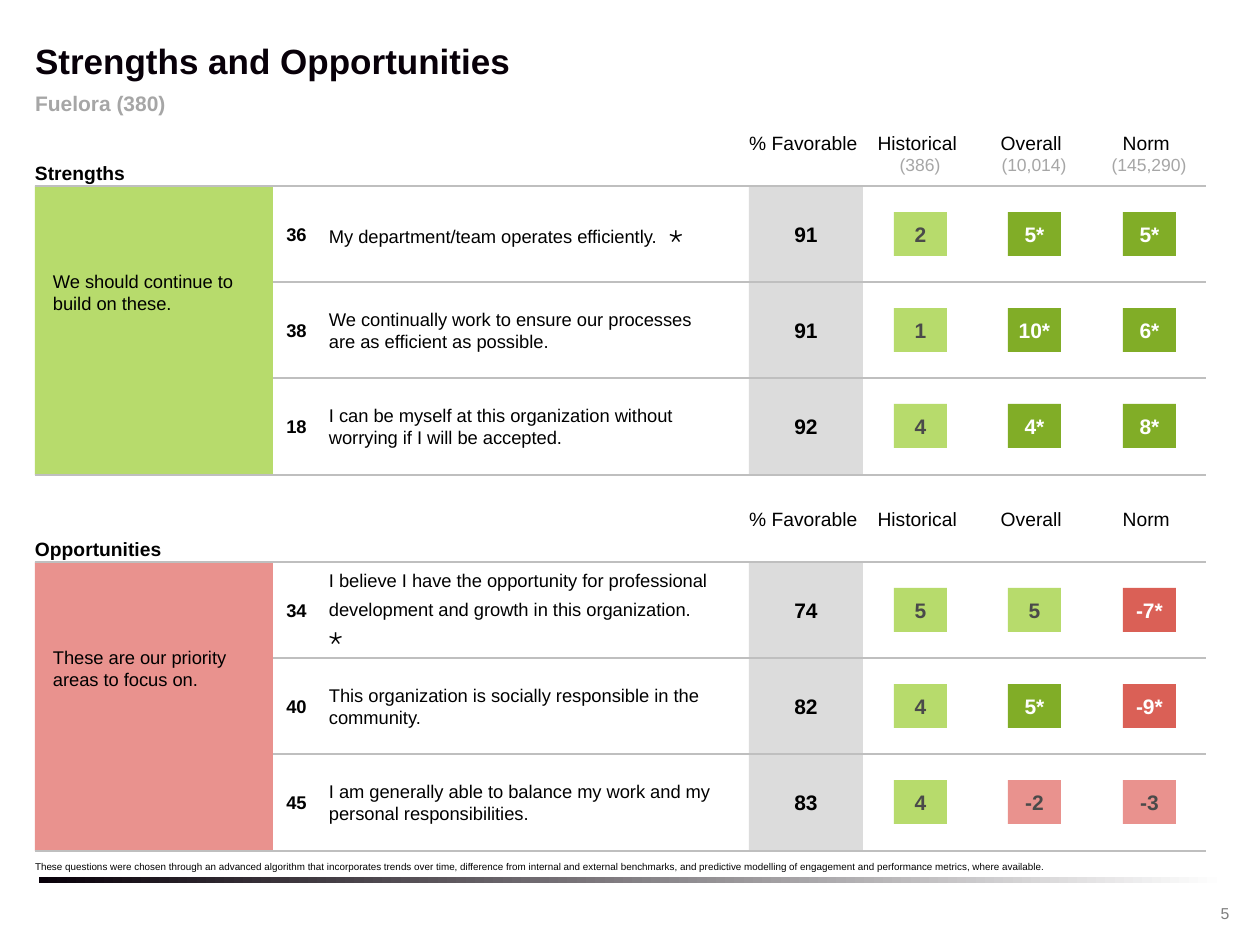
"""Build the strengths and opportunities survey slide."""
from pptx import Presentation, util as u
from pptx.dml.color import RGBColor
from pptx.enum import shapes, text
from pptx.oxml.ns import qn
from lxml import etree

STAR = (" ⋆", 14)
HEADS = ["% Favorable ", "Historical ", "Overall ", "Norm "]
PARTS = [
    dict(name="Strengths", top=186, fill="B7DB6C",
         note="We should continue to build on these.",
         sizes=["", "(386)", "(10,014)", "(145,290)"],
         rows=[
             ("36", ["My department/team operates efficiently. ", STAR],
              "91", ["2", "5*", "5*"]),
             ("38", ["We continually work to ensure our processes are as efficient as possible."],
              "91", ["1", "10*", "6*"]),
             ("18", ["I can be myself at this organization without worrying if I will be accepted."],
              "92", ["4", "4*", "8*"]),
         ]),
    dict(name="Opportunities", top=562, fill="E9928E",
         note="These are our priority areas to focus on.",
         sizes=["", "", "", ""],
         rows=[
             ("34", ["I believe I have the opportunity for professional development "
                     "and growth in this organization. ", STAR],
              "74", ["5", "5", "-7*"]),
             ("40", ["This organization is socially responsible in the community."],
              "82", ["4", "5*", "-9*"]),
             ("45", ["I am generally able to balance my work and my personal responsibilities."],
              "83", ["4", "-2", "-3"]),
         ]),
]
FOOT = ("These questions were chosen through an advanced algorithm that incorporates "
        "trends over time, difference from internal and external benchmarks, and "
        "predictive modelling of engagement and performance metrics, where available.")
COLS = [35, 273, 749, 863, 977, 1092, 1206]
TALL = 289
TONES = {(False, False): "B7DB6C", (False, True): "81AD27",
         (True, False): "E9928E", (True, True): "DA6056"}
MID, LOW, TOP = text.MSO_ANCHOR.MIDDLE, text.MSO_ANCHOR.BOTTOM, text.MSO_ANCHOR.TOP
LEFT, MEAN = text.PP_ALIGN.LEFT, text.PP_ALIGN.CENTER


def px(n):
    return u.Emu(round(n * 914400 / 126))


def hue(code):
    return RGBColor.from_string(code)


def write(shape, runs, size=10.5, color="000000", bold=False, align=LEFT,
          anchor=MID, pad=(0, 0, 0, 0), wrap=True):
    frame = shape.text_frame
    frame.auto_size = text.MSO_AUTO_SIZE.NONE
    frame.word_wrap, frame.vertical_anchor = wrap, anchor
    (frame.margin_left, frame.margin_top,
     frame.margin_right, frame.margin_bottom) = map(px, pad)
    para = frame.paragraphs[0]
    para.alignment = align
    for item in [runs] if isinstance(runs, str) else runs:
        if item == "\n":
            para.add_line_break()
            continue
        words, pt, tone = ((item,) if isinstance(item, str) else item) + (None,) * (
            2 if isinstance(item, str) else 3 - len(item))
        run = para.add_run()
        run.text = words
        run.font.name, run.font.bold = "Arial", bold
        run.font.size = u.Pt(pt or size)
        run.font.color.rgb = hue(tone or color)


def label(slide, runs, x, y, w, h, **form):
    write(slide.shapes.add_textbox(px(x), px(y), px(w), px(h)), runs, **form)


def block(slide, x, y, w, h, fill=None):
    box = slide.shapes.add_shape(shapes.MSO_SHAPE.RECTANGLE, px(x), px(y), px(w), px(h))
    box.shadow.inherit = False
    box.line.fill.background()
    if fill:
        box.fill.solid()
        box.fill.fore_color.rgb = hue(fill)
    return box


def rule(slide, x, end, y):
    line = slide.shapes.add_connector(
        shapes.MSO_CONNECTOR.STRAIGHT, px(x), px(y), px(end), px(y))
    line.line.color.rgb = hue("BFBFBF")
    line.line.width = u.Pt(0.75)
    etree.SubElement(line._element.spPr, qn("a:effectLst"))


def chip(slide, x, y, score):
    strong = score.endswith("*")
    box = block(slide, x + 31, y + 26, 53, 44, TONES[score.startswith("-"), strong])
    write(box, score, size=12, bold=True, align=MEAN, pad=(0, 6, 0, 6), wrap=False,
          color="FFFFFF" if strong else "4A4A4A")


def section(slide, part):
    top = part["top"]
    edges = [top + TALL * i // 3 for i in range(4)]
    label(slide, part["name"], COLS[0], top - 32, 238, 30, size=11, bold=True, anchor=LOW)
    for x, head, count in zip(COLS[2:], HEADS, part["sizes"]):
        runs = [head, "\n", (count, 10, "A6A6A6")] if count else head
        label(slide, runs, x, top - 64, 114, 62, size=11, align=MEAN,
              anchor=TOP, pad=(0, 9, 0, 0))
    block(slide, COLS[0], top, 238, TALL, part["fill"])
    label(slide, part["note"], 53, top + 84, 190, 116, anchor=TOP)
    for y, end, (num, quest, value, scores) in zip(edges, edges[1:], part["rows"]):
        block(slide, COLS[2], y, 114, end - y, "DCDCDC")
        label(slide, num, COLS[1], y + 38, 47, 21, bold=True, align=MEAN)
        label(slide, quest, 320, y + 3, 404, 90, pad=(9, 0, 13, 0))
        label(slide, value, COLS[2], y + 36, 114, 25, size=12, bold=True, align=MEAN)
        for x, score in zip(COLS[3:], scores):
            chip(slide, x, y, score)
    for x, end in zip(COLS, COLS[1:]):
        for y in edges[::3] if x == COLS[0] else edges:
            rule(slide, x, end, y)


def main():
    deck = Presentation()
    deck.slide_width, deck.slide_height = px(1260), px(945)
    slide = deck.slides.add_slide(deck.slide_layouts[5])
    bar = block(slide, 39, 877, 1187, 6)
    bar.fill.gradient()
    bar.fill.gradient_angle = 0
    for stop, place, tone in zip(bar.fill.gradient_stops, (0, 1), ("080009", "FFFFFF")):
        stop.position, stop.color.rgb = place, hue(tone)
    title = slide.shapes.title
    title.left, title.top, title.width, title.height = map(px, (35, 36, 1189, 48))
    write(title, "Strengths and Opportunities", size=20, color="080009", bold=True)
    label(slide, "Fuelora (380)", 35, 90, 1189, 26, size=12, color="A6A6A6", bold=True)
    for part in PARTS:
        section(slide, part)
    label(slide, FOOT, 35, 858, 1189, 18, size=5.6)
    label(slide, "5", 1192, 897, 66, 32, size=9, color="7F7F7F", align=MEAN)
    deck.save("out.pptx")


if __name__ == "__main__":
    main()
